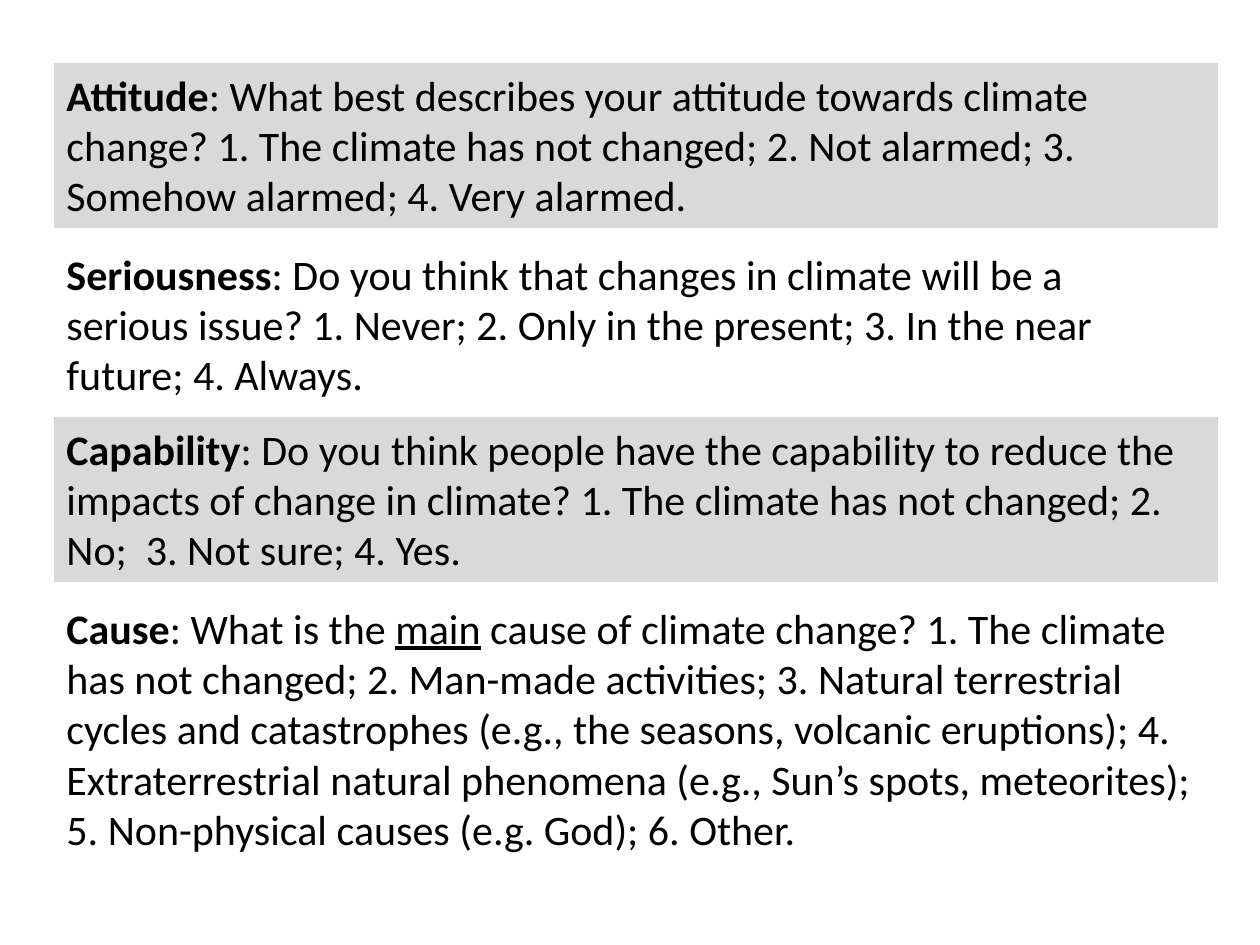
"""Build a slide of four survey questions on climate change."""
from pptx import Presentation
from pptx.dml.color import RGBColor
from pptx.enum.shapes import MSO_SHAPE
from pptx.enum.text import MSO_ANCHOR, MSO_AUTO_SIZE, PP_ALIGN
from pptx.util import Pt

EMU_PER_PX = 914400 / 126
COLORS = {"band": "D9D9D9", "text": "000000"}
FONT = {"name": "Calibri", "size": Pt(24)}
FRAME = {"word_wrap": True, "auto_size": MSO_AUTO_SIZE.SHAPE_TO_FIT_TEXT,
         "vertical_anchor": MSO_ANCHOR.TOP}
BOLD, PLAIN, UNDERLINED = {"bold": True}, {"bold": False}, {"underline": True}
LEFT = 54


def px(length):
    return round(length * EMU_PER_PX)


questions = [
    (63, 1164, 165, True, [
        ("Attitude", BOLD),
        (": What best describes your attitude towards climate change? "
         "1. The climate has not changed; 2. Not alarmed; "
         "3. Somehow alarmed; 4. Very alarmed.", PLAIN)]),
    (242, 1118, 165, False, [
        ("Seriousness", BOLD),
        (": Do you think that changes in climate will be a serious issue? "
         "1. Never; 2. Only in the present; 3. In the near future; "
         "4. Always.", PLAIN)]),
    (417, 1164, 165, True, [
        ("Capability", BOLD),
        (": Do you think people have the capability to reduce the impacts of "
         "change in climate? 1. The climate has not changed; 2. No;  "
         "3. Not sure; 4. Yes.", PLAIN)]),
    (596, 1164, 267, False, [
        ("Cause", BOLD),
        (": What is the ", PLAIN),
        ("main", UNDERLINED),
        (" cause of climate change? 1. The climate has not changed; "
         "2. Man-made activities; 3. Natural terrestrial cycles and "
         "catastrophes (e.g., the seasons, volcanic eruptions); "
         "4. Extraterrestrial natural phenomena (e.g., Sun’s spots, "
         "meteorites); 5. Non-physical causes (e.g. God); 6. Other.", PLAIN)]),
]

deck = Presentation()
deck.slide_width, deck.slide_height = px(1260), px(945)
slide = deck.slides.add_slide(deck.slide_layouts[6])

for top, width, height, banded, wording in questions:
    bounds = [px(length) for length in (LEFT, top, width, height)]
    if banded:
        question = slide.shapes.add_shape(MSO_SHAPE.RECTANGLE, *bounds)
        question.shadow.inherit = False
        question.fill.solid()
        question.fill.fore_color.rgb = RGBColor.from_string(COLORS["band"])
        question.line.fill.background()
    else:
        question = slide.shapes.add_textbox(*bounds)
    for name, value in FRAME.items():
        setattr(question.text_frame, name, value)
    paragraph = question.text_frame.paragraphs[0]
    paragraph.alignment = PP_ALIGN.LEFT
    for words, emphasis in wording:
        run = paragraph.add_run()
        run.text = words
        for name, value in {**FONT, **emphasis}.items():
            setattr(run.font, name, value)
        run.font.color.rgb = RGBColor.from_string(COLORS["text"])

deck.save("out.pptx")
